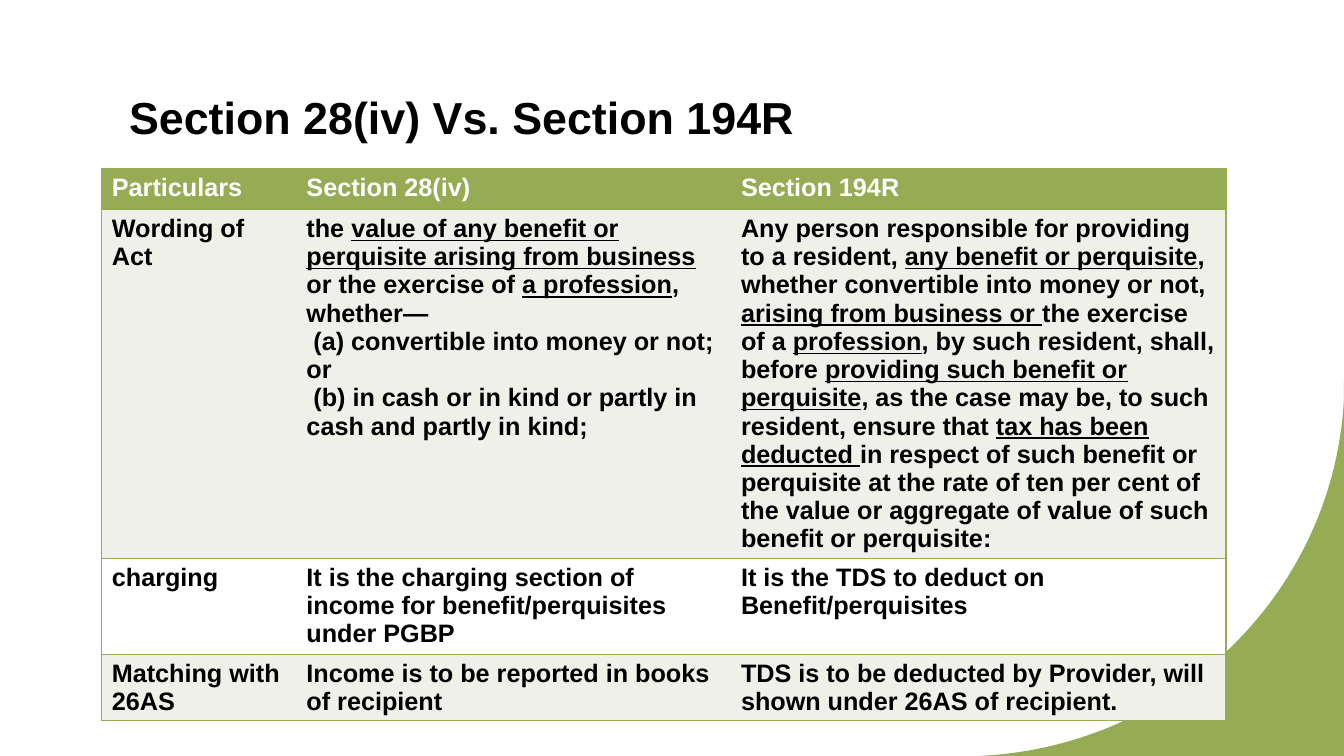
"""Build a slide comparing Section 28(iv) with Section 194R."""
from lxml import etree
from pptx import Presentation
from pptx.dml.color import RGBColor
from pptx.enum import text
from pptx.oxml import ns
from pptx.util import Inches, Pt

GREEN, PALE, WHITE, BLACK = "95AB54", "EFF1E9", "FFFFFF", "000000"
NO_GRID_STYLE = "{2D5ABB26-0587-4C30-8999-92F81FD0307C}"


def colour(value):
    return RGBColor.from_string(value)


def add_span(para, words, size, shade, underline=False):
    span = para.add_run()
    span.text = words
    formats = {"name": "Arial", "size": Pt(size), "bold": True, "underline": underline}
    for name, value in formats.items():
        setattr(span.font, name, value)
    span.font.color.rgb = colour(shade)


deck = Presentation()
deck.slide_width, deck.slide_height = Inches(13.33), Inches(7.5)
page = deck.slides.add_slide(deck.slide_layouts[5])

curve = [(9.71, 7.5), (11.67, 7.41), (13.23, 5.87), (13.33, 3.96)]
steps = 60
edge = []
for step in range(steps + 1):
    t = step / steps
    weights = [(1 - t) ** 3, 3 * t * (1 - t) ** 2, 3 * t * t * (1 - t), t ** 3]
    edge.append(tuple(
        Inches(sum(weight * point[axis] for weight, point in zip(weights, curve)))
        for axis in (0, 1)))
builder = page.shapes.build_freeform(Inches(13.33), Inches(3.78), scale=1.0)
builder.add_line_segments([(Inches(13.33), Inches(7.5)), (Inches(9.63), Inches(7.5))] + edge)
corner = builder.convert_to_shape()
corner.shadow.inherit = False
corner.fill.solid()
corner.fill.fore_color.rgb = colour(GREEN)
corner.line.fill.background()

title = page.shapes.title
place = {"left": 1.18, "top": 0.79, "width": 10.88, "height": 0.68}
for name, value in place.items():
    setattr(title, name, Inches(value))
frame = title.text_frame
frame.word_wrap = True
frame.auto_size = text.MSO_AUTO_SIZE.NONE
frame.vertical_anchor = text.MSO_ANCHOR.BOTTOM
para = frame.paragraphs[0]
para.alignment = text.PP_ALIGN.LEFT
para.line_spacing = 1.1
add_span(para, "Section 28(iv) Vs. Section 194R", 32, BLACK)

# Underlined words stand between vertical bars.
rows = [
    ["Particulars", "Section 28(iv)", "Section 194R"],
    ["Wording of Act",
     "the |value of any benefit or perquisite arising from business| or the exercise of "
     "|a profession|, whether—\n"
     " (a) convertible into money or not; or\n"
     " (b) in cash or in kind or partly in cash and partly in kind;",
     "Any person responsible for providing to a resident, |any benefit or perquisite|, "
     "whether convertible into money or not, |arising from business or |the exercise of a "
     "|profession|, by such resident, shall, before |providing such benefit or perquisite|, "
     "as the case may be, to such resident, ensure that |tax has been deducted |in respect "
     "of such benefit or perquisite at the rate of ten per cent of the value or aggregate "
     "of value of such benefit or perquisite:"],
    ["charging",
     "It is the charging section of income for benefit/perquisites under PGBP",
     "It is the TDS to deduct on Benefit/perquisites"],
    ["Matching with 26AS",
     "Income is to be reported in books of recipient",
     "TDS is to be deducted by Provider, will shown under 26AS of recipient."],
]
widths = [1.93, 4.31, 4.91]
heights = [0.41, 3.45, 0.95, 0.66]
fills = [GREEN, PALE, WHITE, PALE]

table = page.shapes.add_table(len(rows), len(widths), Inches(1.01), Inches(1.67),
                              Inches(sum(widths)), Inches(sum(heights))).table
table._tbl.tblPr.find(ns.qn("a:tableStyleId")).text = NO_GRID_STYLE
for column, width in zip(table.columns, widths):
    column.width = Inches(width)
for row, height in zip(table.rows, heights):
    row.height = Inches(height)

for row_index, row in enumerate(rows):
    for column_index, words in enumerate(row):
        cell = table.cell(row_index, column_index)
        sides = {0: ["lnL"], 1: [], 2: ["lnR"]}[column_index] + ["lnT", "lnB"]
        properties = cell._tc.get_or_add_tcPr()
        for side in sides:
            line = etree.SubElement(properties, ns.qn(f"a:{side}"), w=str(Pt(1)))
            paint = etree.SubElement(line, ns.qn("a:solidFill"))
            etree.SubElement(paint, ns.qn("a:srgbClr"), val=GREEN)
        cell.fill.solid()
        cell.fill.fore_color.rgb = colour(fills[row_index])
        for index, sentence in enumerate(words.split("\n")):
            frame = cell.text_frame
            para = frame.add_paragraph() if index else frame.paragraphs[0]
            for part, piece in enumerate(sentence.split("|")):
                add_span(para, piece, 18, BLACK if row_index else WHITE, part % 2 == 1)

deck.save("out.pptx")
